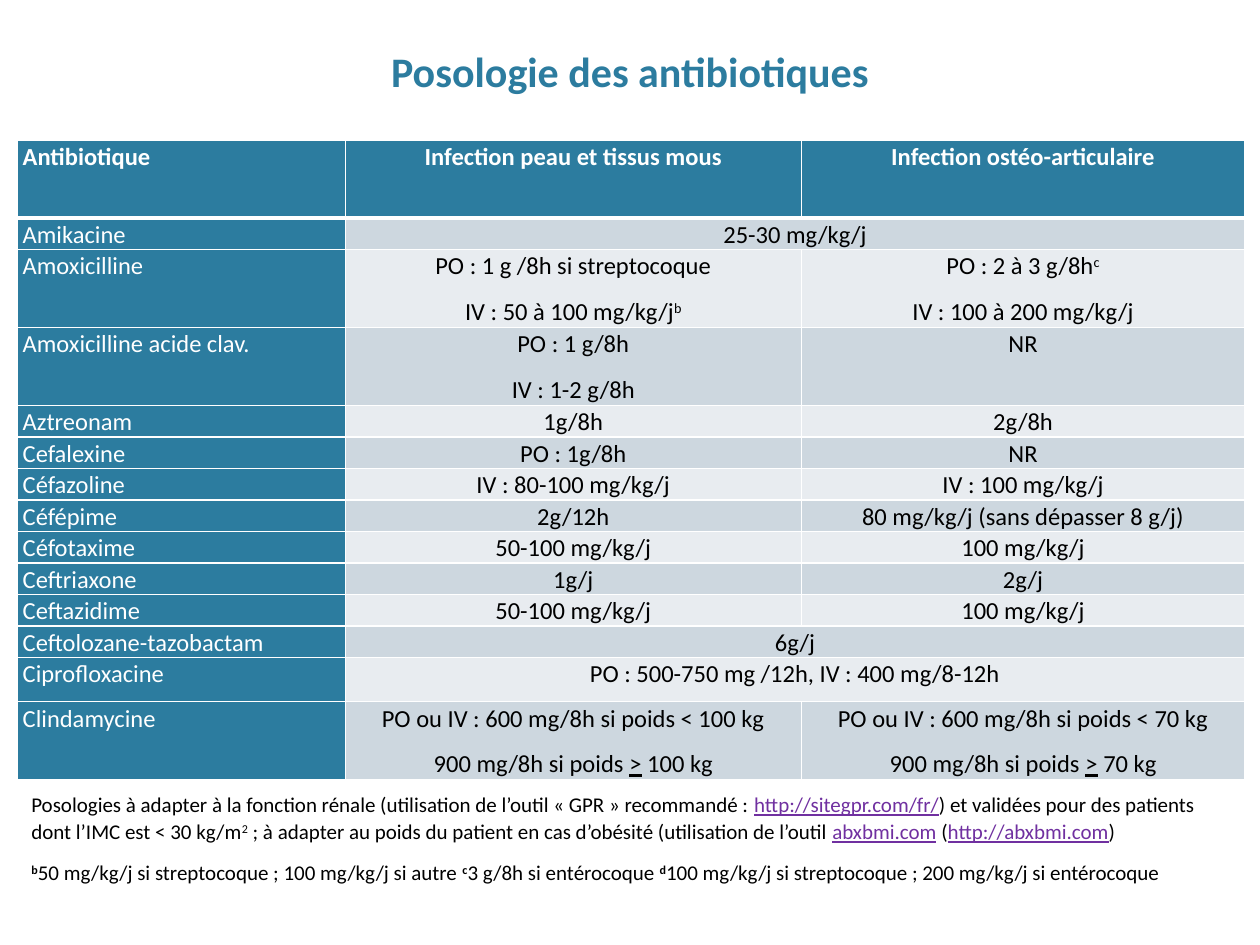
from dataclasses import dataclass
from typing import Optional, Union

import lxml.etree
import pptx
import pptx.dml.color
import pptx.enum.text
import pptx.oxml.ns
import pptx.util

Inches = pptx.util.Inches
Pt = pptx.util.Pt
ALIGN = pptx.enum.text.PP_ALIGN
ANCHOR = pptx.enum.text.MSO_ANCHOR

COLORS = {
    "teal": "2C7C9F",
    "white": "FFFFFF",
    "black": "000000",
    "link": "7030A0",
    "dark_band": "CDD7DF",
    "light_band": "E8ECF0",
}
FONT = "Calibri"
SINGLE, MEDIUM, DOUBLE = 0.25, 0.35, 0.62
COLUMN_WIDTHS = (2.6, 3.62, 3.52)


@dataclass(frozen=True)
class Span:
    text: str
    raised: bool = False
    underlined: bool = False
    bold: bool = False
    color: Optional[str] = None


Line = tuple[Union[str, Span], ...]
Lines = tuple[Line, ...]


@dataclass(frozen=True)
class Dosage:
    antibiotic: str
    soft_tissue: Lines
    bone: Optional[Lines]
    height: float = SINGLE


def plain(*texts: str) -> Lines:
    return tuple((text,) for text in texts)


def weight_limits(limit: int) -> Lines:
    return (
        (f"PO ou IV : 600 mg/8h si poids < {limit} kg",),
        ("900 mg/8h si poids ", Span(">", underlined=True), f" {limit} kg"),
    )


def link(text: str) -> Span:
    return Span(text, underlined=True, color="link")


def note_mark(letter: str) -> Span:
    return Span(letter, raised=True, bold=True)


DOSAGES = (
    Dosage("Amikacine", plain("25-30 mg/kg/j"), None),
    Dosage(
        "Amoxicilline",
        (("PO : 1 g /8h si streptocoque",), ("IV : 50 à 100 mg/kg/j", Span("b", raised=True))),
        (("PO : 2 à 3 g/8h", Span("c", raised=True)), ("IV : 100 à 200 mg/kg/j",)),
        DOUBLE,
    ),
    Dosage("Amoxicilline acide clav.", plain("PO : 1 g/8h", "IV : 1-2 g/8h"), plain("NR"), DOUBLE),
    Dosage("Aztreonam", plain("1g/8h"), plain("2g/8h")),
    Dosage("Cefalexine", plain("PO : 1g/8h"), plain("NR")),
    Dosage("Céfazoline", plain("IV : 80-100 mg/kg/j"), plain("IV : 100 mg/kg/j")),
    Dosage("Céfépime", plain("2g/12h"), plain("80 mg/kg/j (sans dépasser 8 g/j)")),
    Dosage("Céfotaxime", plain("50-100 mg/kg/j"), plain("100 mg/kg/j")),
    Dosage("Ceftriaxone", plain("1g/j"), plain("2g/j")),
    Dosage("Ceftazidime", plain("50-100 mg/kg/j"), plain("100 mg/kg/j")),
    Dosage("Ceftolozane-tazobactam", plain("6g/j"), None),
    Dosage("Ciprofloxacine", plain("PO : 500-750 mg /12h, IV : 400 mg/8-12h"), None, MEDIUM),
    Dosage("Clindamycine", weight_limits(100), weight_limits(70), DOUBLE),
)

HEADER = Dosage(
    "Antibiotique",
    plain("Infection peau et tissus mous"),
    plain("Infection ostéo-articulaire"),
    DOUBLE,
)

FOOTNOTES: Lines = (
    (
        "Posologies à adapter à la fonction rénale (utilisation de l’outil « GPR » recommandé : ",
        link("http://sitegpr.com/fr/"),
        ") et validées pour des patients dont l’IMC est < 30 kg/m",
        Span("2", raised=True),
        " ; à adapter au poids du patient en cas d’obésité (utilisation de l’outil ",
        link("abxbmi.com"),
        " (",
        link("http://abxbmi.com"),
        ")",
    ),
    (
        note_mark("b"),
        "50 mg/kg/j si streptocoque ; 100 mg/kg/j si autre ",
        note_mark("c"),
        "3 g/8h si entérocoque ",
        note_mark("d"),
        "100 mg/kg/j si streptocoque ; 200 mg/kg/j si entérocoque",
    ),
)


def rgb(name: str) -> pptx.dml.color.RGBColor:
    return pptx.dml.color.RGBColor.from_string(COLORS[name])


def write_lines(text_frame, lines: Lines, size: float, color: str,
                align=ALIGN.LEFT, bold: bool = False) -> None:
    for index, line in enumerate(lines):
        paragraph = text_frame.add_paragraph() if index else text_frame.paragraphs[0]
        paragraph.alignment = align
        paragraph.line_spacing = 1.07
        paragraph.space_after = Pt(8)
        for piece in line:
            span = Span(piece) if isinstance(piece, str) else piece
            run = paragraph.add_run()
            run.text = span.text
            run.font.name = FONT
            run.font.size = Pt(size)
            run.font.bold = bold or span.bold
            run.font.underline = span.underlined
            run.font.color.rgb = rgb(span.color or color)
            if span.raised:
                run._r.get_or_add_rPr().set("baseline", "30000")


def set_borders(cell, bottom: float, top: float) -> None:
    properties = cell._tc.get_or_add_tcPr()
    qn = pptx.oxml.ns.qn
    widths = {"a:lnL": 1, "a:lnR": 1, "a:lnT": top, "a:lnB": bottom}
    for position, (side, width) in enumerate(widths.items()):
        border = lxml.etree.Element(qn(side), w=str(Pt(width)))
        fill = lxml.etree.SubElement(border, qn("a:solidFill"))
        lxml.etree.SubElement(fill, qn("a:srgbClr"), val=COLORS["white"])
        properties.insert(position, border)


def draw_dosage_table(slide, dosages: tuple[Dosage, ...]) -> None:
    table = slide.shapes.add_table(
        len(dosages), len(COLUMN_WIDTHS), Inches(0.14), Inches(1.11),
        Inches(sum(COLUMN_WIDTHS)), Inches(sum(dosage.height for dosage in dosages)),
    ).table
    table.first_row = table.horz_banding = False
    for column, width in zip(table.columns, COLUMN_WIDTHS):
        column.width = Inches(width)
    for row_index, dosage in enumerate(dosages):
        table.rows[row_index].height = Inches(dosage.height)
        is_header = row_index == 0
        band = "dark_band" if row_index % 2 else "light_band"
        contents = (plain(dosage.antibiotic), dosage.soft_tissue, dosage.bone)
        for column_index, lines in enumerate(contents):
            cell = table.cell(row_index, column_index)
            is_teal = is_header or column_index == 0
            cell.margin_left = cell.margin_right = Inches(0.04)
            cell.margin_top = cell.margin_bottom = 0
            cell.fill.solid()
            cell.fill.fore_color.rgb = rgb("teal" if is_teal else band)
            set_borders(cell, bottom=3 if is_header else 1, top=3 if row_index == 1 else 1)
            if lines is not None:
                write_lines(cell.text_frame, lines, 14, "white" if is_teal else "black",
                            ALIGN.CENTER if column_index else ALIGN.LEFT, is_header)
        if dosage.bone is None:
            table.cell(row_index, 1).merge(table.cell(row_index, 2))


def add_text_area(slide, left: float, top: float, width: float, height: float):
    text_frame = slide.shapes.add_textbox(
        Inches(left), Inches(top), Inches(width), Inches(height)).text_frame
    text_frame.word_wrap = True
    return text_frame


def main() -> None:
    presentation = pptx.Presentation()
    presentation.slide_width, presentation.slide_height = Inches(10), Inches(7.5)
    slide = presentation.slides.add_slide(presentation.slide_layouts[6])

    title = add_text_area(slide, 0.6, 0.14, 8.8, 0.67)
    title.vertical_anchor = ANCHOR.BOTTOM
    title.text = "Posologie des antibiotiques"
    heading = title.paragraphs[0]
    heading.alignment = ALIGN.CENTER
    heading.font.name, heading.font.size, heading.font.bold = FONT, Pt(24), True
    heading.font.color.rgb = rgb("teal")

    draw_dosage_table(slide, (HEADER, *DOSAGES))
    write_lines(add_text_area(slide, 0.15, 6.22, 9.72, 1.28), FOOTNOTES, 12, "black")
    presentation.save("out.pptx")


if __name__ == "__main__":
    main()
